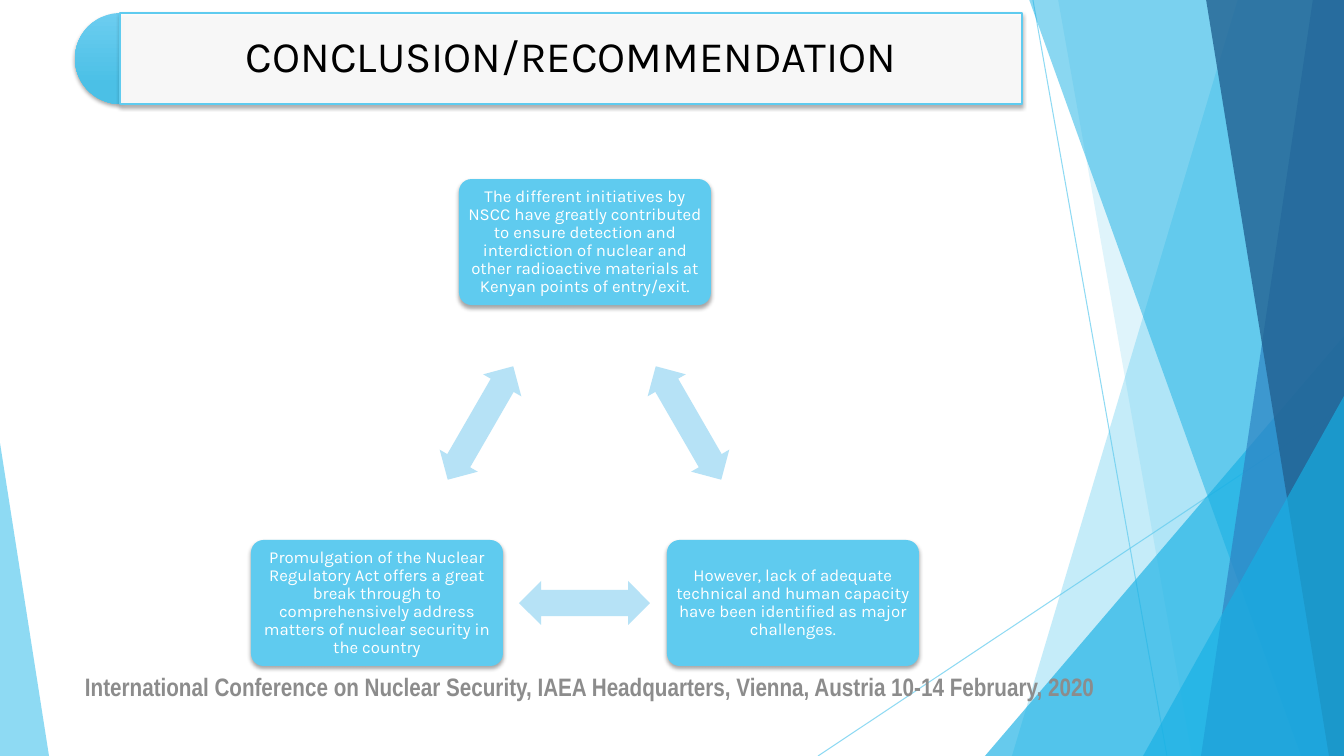
import pptx
import pptx.util
import pptx.dml.color
import pptx.enum.dml
import pptx.enum.shapes
import pptx.enum.text
import pptx.oxml
import pptx.oxml.ns

RGBColor = pptx.dml.color.RGBColor
SHAPE = pptx.enum.shapes.MSO_SHAPE
ALIGN = pptx.enum.text.PP_ALIGN

SKY = RGBColor(0x5F, 0xCB, 0xEF)
CYAN = RGBColor(0x17, 0xB0, 0xE4)
BLUE = RGBColor(0x2E, 0x83, 0xC3)
NAVY = RGBColor(0x22, 0x62, 0x92)
PIE_TOP = RGBColor(0x6C, 0xCD, 0xF0)
PIE_BOTTOM = RGBColor(0x4B, 0xC0, 0xE6)
PALE = RGBColor(0xB6, 0xE2, 0xF6)
GREY = RGBColor(0x8C, 0x8C, 0x8C)
BLACK = RGBColor(0, 0, 0)
WHITE = RGBColor(0xFF, 0xFF, 0xFF)

SCALE = 914400 / 100.8
WIDTH, HEIGHT = 1344, 756

BOXES = [
    (459, 179, "The different initiatives by NSCC have greatly contributed to ensure "
               "detection and interdiction of nuclear and other radioactive materials "
               "at Kenyan points of entry/exit."),
    (667, 540, "However, lack of adequate technical and human capacity have been "
               "identified as major challenges."),
    (251, 540, "Promulgation of the Nuclear Regulatory Act offers a great break through "
               "to comprehensively address matters of nuclear security in the country"),
]
ARROWS = [(623, 401, 60), (519, 581, 180), (415, 401, 300)]


def px(n):
    return pptx.util.Emu(round(n * SCALE))


def set_alpha(color_parent, percent):
    for clr in color_parent.iter(pptx.oxml.ns.qn("a:srgbClr")):
        alpha = clr.makeelement(pptx.oxml.ns.qn("a:alpha"), {"val": str(percent * 1000)})
        clr.append(alpha)


def paint(sp, color, alpha=100):
    sp.shadow.inherit = False
    sp.line.fill.background()
    sp.fill.solid()
    sp.fill.fore_color.rgb = color
    if alpha < 100:
        set_alpha(sp._element.spPr, alpha)


def add_shadow(sp):
    effects = sp._element.spPr.find(pptx.oxml.ns.qn("a:effectLst"))
    effects.append(pptx.oxml.parse_xml(
        f'<a:outerShdw {pptx.oxml.ns.nsdecls("a")} blurRad="38100" dist="25400" '
        'dir="5400000" rotWithShape="0"><a:srgbClr val="000000">'
        '<a:alpha val="35000"/></a:srgbClr></a:outerShdw>'))


def add_preset(s, kind, x, y, w, h, color, alpha=100, adjust=()):
    sp = s.shapes.add_shape(kind, px(x), px(y), px(w), px(h))
    for i, value in enumerate(adjust):
        sp.adjustments[i] = value
    paint(sp, color, alpha)
    return sp


def add_band(s, top_x, bottom_x, color, alpha):
    fb = s.shapes.build_freeform(top_x, -1, scale=SCALE)
    fb.add_line_segments([(WIDTH, -1), (WIDTH, HEIGHT), (bottom_x, HEIGHT)], close=True)
    paint(fb.convert_to_shape(), color, alpha)


def add_thin_line(s, x1, y1, x2, y2):
    cn = s.shapes.add_connector(pptx.enum.shapes.MSO_CONNECTOR.STRAIGHT,
                                px(x1), px(y1), px(x2), px(y2))
    cn.line.color.rgb = SKY
    cn.line.width = pptx.util.Pt(0.75)
    spPr = cn._element.spPr
    set_alpha(spPr, 70)
    spPr.append(spPr.makeelement(pptx.oxml.ns.qn("a:effectLst"), {}))


def write(sp, text, size, font, color, margins, align=ALIGN.CENTER, spacing=0.9, bold=False):
    tf = sp.text_frame
    tf.word_wrap = True
    tf.auto_size = pptx.enum.text.MSO_AUTO_SIZE.NONE
    tf.vertical_anchor = pptx.enum.text.MSO_ANCHOR.MIDDLE
    tf.margin_left = tf.margin_right = px(margins[0])
    tf.margin_top = tf.margin_bottom = px(margins[1])
    p = tf.paragraphs[0]
    p.alignment = align
    p.line_spacing = spacing
    r = p.add_run()
    r.text = text
    r.font.size = pptx.util.Pt(size)
    r.font.name = font
    r.font.bold = bold
    r.font.color.rgb = color


def add_backdrop(s):
    add_thin_line(s, 1033, 0, 1167, HEIGHT)
    add_thin_line(s, WIDTH, 406, 818, HEIGHT)
    add_band(s, 1238, 1012, SKY, 36)
    add_band(s, 1058, 1192, SKY, 20)
    add_preset(s, SHAPE.ISOSCELES_TRIANGLE, 985, 336, 359, 420, CYAN, 66, [1])
    add_band(s, 1029, 1301, CYAN, 50)
    add_band(s, 1313, 1201, BLUE, 70)
    add_band(s, 1206, 1329, NAVY, 80)
    add_preset(s, SHAPE.ISOSCELES_TRIANGLE, 1143, 396, 201, 360, CYAN, 66, [1])
    add_preset(s, SHAPE.ISOSCELES_TRIANGLE, 0, 443, 49, 313, SKY, 70, [0])


def add_title(s):
    pie = add_preset(s, SHAPE.PIE, 75, 13, 91, 91, PIE_TOP, adjust=[54, 162])
    pie.fill.gradient()
    pie.fill.gradient_angle = 270
    for stop, position, color in zip(pie.fill.gradient_stops, (0, 0.78), (PIE_TOP, PIE_BOTTOM)):
        stop.position = position
        stop.color.rgb = color
    add_shadow(pie)

    panel = add_preset(s, SHAPE.RECTANGLE, 120, 13, 902, 91, WHITE, 90)
    panel.line.color.rgb = SKY
    panel.line.width = pptx.util.Pt(1)
    add_shadow(panel)

    title = s.shapes.title
    title.left, title.top, title.width, title.height = px(120), px(13), px(902), px(91)
    write(title, "CONCLUSION/RECOMMENDATION", 31, "Karla", BLACK, (13, 13))
    s.shapes._spTree.append(title._element)


def add_cycle(s):
    for (x, y, text), (arrow_x, arrow_y, angle) in zip(BOXES, ARROWS):
        box = add_preset(s, SHAPE.ROUNDED_RECTANGLE, x, y, 252, 126, SKY, adjust=[0.1])
        add_shadow(box)
        write(box, text, 12, "Karla", WHITE, (5, 5))
        arrow = add_preset(s, SHAPE.LEFT_RIGHT_ARROW, arrow_x, arrow_y, 131, 44, PALE,
                           adjust=[0.6, 0.5])
        arrow.rotation = angle


def add_footer(s):
    tb = s.shapes.add_textbox(px(75), px(666), px(1130), px(40))
    write(tb, "International Conference on Nuclear Security, IAEA Headquarters, "
              "Vienna, Austria 10-14 February, 2020",
          18, "Arial Narrow", GREY, (10, 5), ALIGN.LEFT, 1.0, True)


def main():
    prs = pptx.Presentation()
    prs.slide_width, prs.slide_height = px(WIDTH), px(HEIGHT)
    s = prs.slides.add_slide(prs.slide_layouts[5])
    add_backdrop(s)
    add_title(s)
    add_cycle(s)
    add_footer(s)
    prs.save("out.pptx")


if __name__ == "__main__":
    main()
